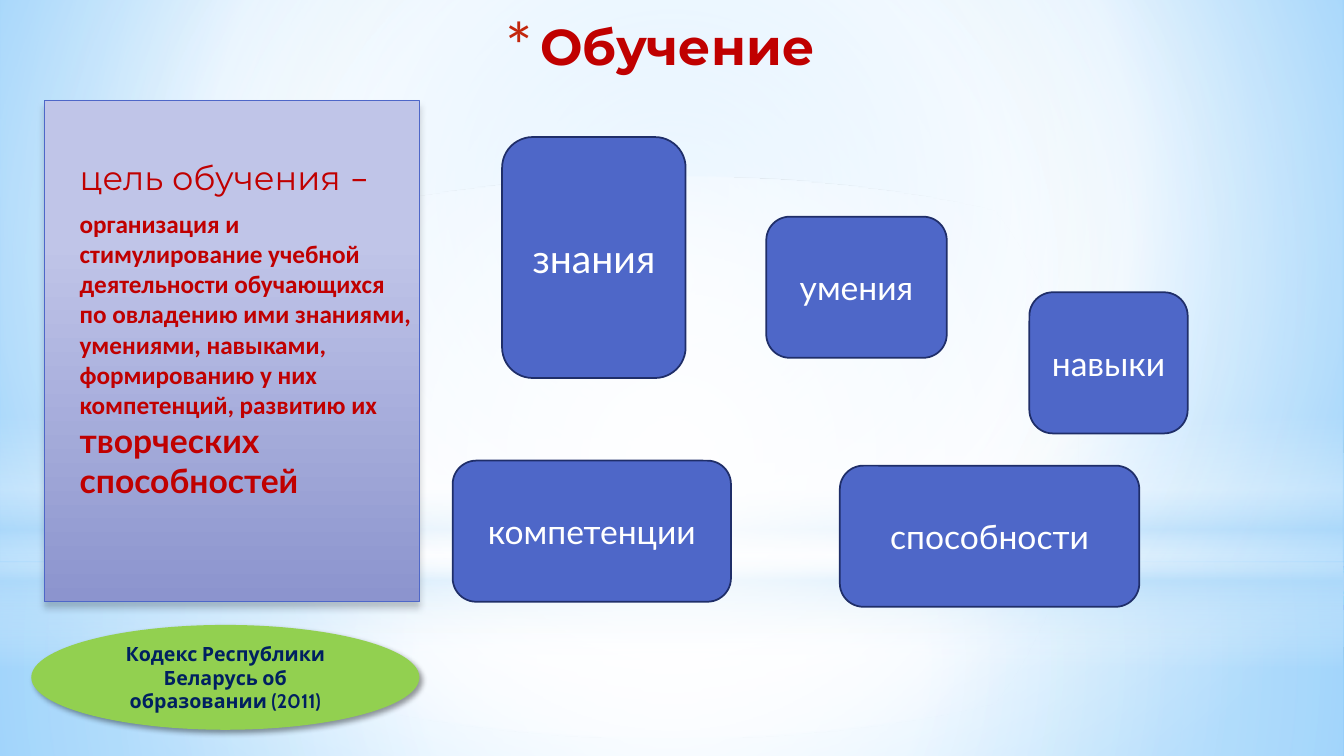
from lxml import etree
from pptx import Presentation
from pptx.dml.color import RGBColor
from pptx.enum.shapes import MSO_SHAPE
from pptx.enum.text import MSO_ANCHOR, PP_ALIGN
from pptx.oxml.ns import qn
from pptx.util import Inches, Pt

RECTANGLE, ELLIPSE, ROUNDED = MSO_SHAPE.RECTANGLE, MSO_SHAPE.OVAL, MSO_SHAPE.ROUNDED_RECTANGLE
TOP, MIDDLE = MSO_ANCHOR.TOP, MSO_ANCHOR.MIDDLE
LEFT, CENTER = PP_ALIGN.LEFT, PP_ALIGN.CENTER

RED, BLUE, NAVY, WHITE = "C00000", "4E67C8", "1F2E69", "FFFFFF"
CENTERED = (50, 50, 50, 50)
BACKGROUND = [(0, "9ED5FF", 100), (60, WHITE, 100), (100, "5BB9FF", 100)]
BACKDROPS = [
    (RECTANGLE, (0, 5.58, 13.33, 1.92),
     [(0, WHITE, 91), (37, WHITE, 76), (100, "B4DCFA", 79)], CENTERED),
    (RECTANGLE, (0, 0, 13.33, 5.58),
     [(0, WHITE, 89), (48, WHITE, 62), (100, "B4DCFA", 79)], CENTERED),
    (RECTANGLE, (0, 4.12, 13.33, 2.5),
     [(0, WHITE, 0), (29, WHITE, 30), (45, "B4DCFA", 40), (55, WHITE, 26),
      (65, "B4DCFA", 60), (100, WHITE, 0)], None),
    (ELLIPSE, (0, 1.75, 13.33, 5.58), [(0, WHITE, 100), (56, WHITE, 0)], CENTERED),
]
TITLE = "Обучение"
GOAL_HEADING = [("цель обучения ", "Montserrat", 24, False), ("–", "Lato", 24, False)]
GOAL_BODY = [
    ("организация и стимулирование учебной деятельности обучающихся "
     "по овладению ими знаниями, умениями, навыками, формированию "
     "у них компетенций, развитию их ", "Calibri", 18, True),
    ("творческих способностей", "Lato", 24, True),
]
GOAL_PANEL = [(28, "C0C5E8", 100), (100, "8C94CE", 100)]
SOURCE = "Кодекс Республики Беларусь об образовании (2011)"
OUTCOMES = [
    ("компетенции", 24, (4.49, 4.57, 2.76, 1.4)),
    ("знания", 28, (4.98, 1.36, 1.82, 2.39)),
    ("навыки", 24, (10.21, 2.9, 1.57, 1.4)),
    ("умения", 24, (7.6, 2.15, 1.79, 1.4)),
    ("способности", 24, (8.33, 4.62, 2.97, 1.4)),
]


def color(value):
    return RGBColor.from_string(value)


def add_node(parent, tag, **attributes):
    return etree.SubElement(parent, qn(tag), {k: str(v) for k, v in attributes.items()})


def set_gradient(fill, container, stops, focus=None):
    fill.solid()
    solid = container.find(qn("a:solidFill"))
    gradient = etree.Element(qn("a:gradFill"), rotWithShape="1")
    stop_list = add_node(gradient, "a:gsLst")
    for position, value, opacity in stops:
        stop = add_node(stop_list, "a:gs", pos=position * 1000)
        stop_color = add_node(stop, "a:srgbClr", val=value)
        if opacity < 100:
            add_node(stop_color, "a:alpha", val=opacity * 1000)
    if focus:
        circle = add_node(gradient, "a:path", path="circle")
        sides = {side: amount * 1000 for side, amount in zip("ltrb", focus)}
        add_node(circle, "a:fillToRect", **sides)
    else:
        add_node(gradient, "a:lin", ang=90 * 60000, scaled=0)
    container.replace(solid, gradient)


def add_box(slide, kind, place, fill=None, stops=None, focus=None, line=None, width=1.25):
    shape = slide.shapes.add_shape(kind, *map(Inches, place))
    shape.shadow.inherit = False
    if stops:
        set_gradient(shape.fill, shape.element.spPr, stops, focus)
    else:
        shape.fill.solid()
        shape.fill.fore_color.rgb = color(fill)
    if line:
        shape.line.color.rgb = color(line)
        shape.line.width = Pt(width)
    else:
        shape.line.fill.background()
    return shape


def add_shadow(shape, opacity, blur, distance, angle):
    effects = shape.element.spPr.find(qn("a:effectLst"))
    shadow = add_node(effects, "a:outerShdw", blurRad=Pt(blur), dist=Pt(distance),
                      dir=angle * 60000, rotWithShape=0)
    add_node(add_node(shadow, "a:srgbClr", val="000000"), "a:alpha", val=opacity * 1000)


def write(paragraph, text, font="Lato", size=24, bold=False, ink=WHITE, align=CENTER):
    paragraph.alignment = align
    run = paragraph.add_run()
    run.text = text
    run.font.name = font
    run.font.size = Pt(size)
    run.font.bold = bold
    run.font.color.rgb = color(ink)


def prepare_frame(shape, anchor=MIDDLE):
    frame = shape.text_frame
    frame.word_wrap = True
    frame.vertical_anchor = anchor
    return frame


def add_title(slide):
    box = slide.shapes.add_textbox(*map(Inches, (0.31, 0.1, 12.47, 0.9)))
    paragraph = prepare_frame(box, TOP).paragraphs[0]
    write(paragraph, TITLE, font="Montserrat", size=36, bold=True, ink=RED)
    properties = paragraph._p.get_or_add_pPr()
    properties.set("marL", str(Inches(0.35)))
    properties.set("indent", str(Inches(-0.35)))
    add_node(add_node(properties, "a:buClr"), "a:srgbClr", val="C3260C")
    add_node(properties, "a:buSzPct", val=128000)
    add_node(properties, "a:buFont", typeface="Lato")
    add_node(properties, "a:buChar", char="*")


def add_goal(slide):
    panel = add_box(slide, RECTANGLE, (0.44, 1, 3.72, 4.97), stops=GOAL_PANEL,
                    line=BLUE, width=0.75)
    add_shadow(panel, 20, 5, 4, 90)
    frame = prepare_frame(panel, TOP)
    frame.margin_left = Inches(0.35)
    frame.margin_right = Inches(0.05)
    frame.margin_top = Inches(0.56)
    heading, body = frame.paragraphs[0], frame.add_paragraph()
    heading.space_after = Pt(3)
    body.space_before = Pt(4.5)
    for paragraph, runs in ((heading, GOAL_HEADING), (body, GOAL_BODY)):
        for text, font, size, bold in runs:
            write(paragraph, text, font=font, size=size, bold=bold, ink=RED, align=LEFT)


def main():
    presentation = Presentation()
    presentation.slide_width, presentation.slide_height = Inches(13.33), Inches(7.5)
    slide = presentation.slides.add_slide(presentation.slide_layouts[6])
    fill = slide.background.fill
    fill.solid()
    set_gradient(fill, slide.element.find(".//" + qn("p:bgPr")), BACKGROUND, (20, 10, 20, 60))
    for kind, place, stops, focus in BACKDROPS:
        add_box(slide, kind, place, stops=stops, focus=focus)
    add_title(slide)
    add_goal(slide)
    source = add_box(slide, ELLIPSE, (0.31, 6.2, 3.85, 1.04), fill="92D050")
    add_shadow(source, 40, 4, 3, 45)
    write(prepare_frame(source).paragraphs[0], SOURCE, font="Cabin", size=14, bold=True,
          ink="002060")
    for text, size, place in OUTCOMES:
        outcome = add_box(slide, ROUNDED, place, fill=BLUE, line=NAVY)
        write(prepare_frame(outcome).paragraphs[0], text, size=size)
    presentation.save("out.pptx")


if __name__ == "__main__":
    main()
